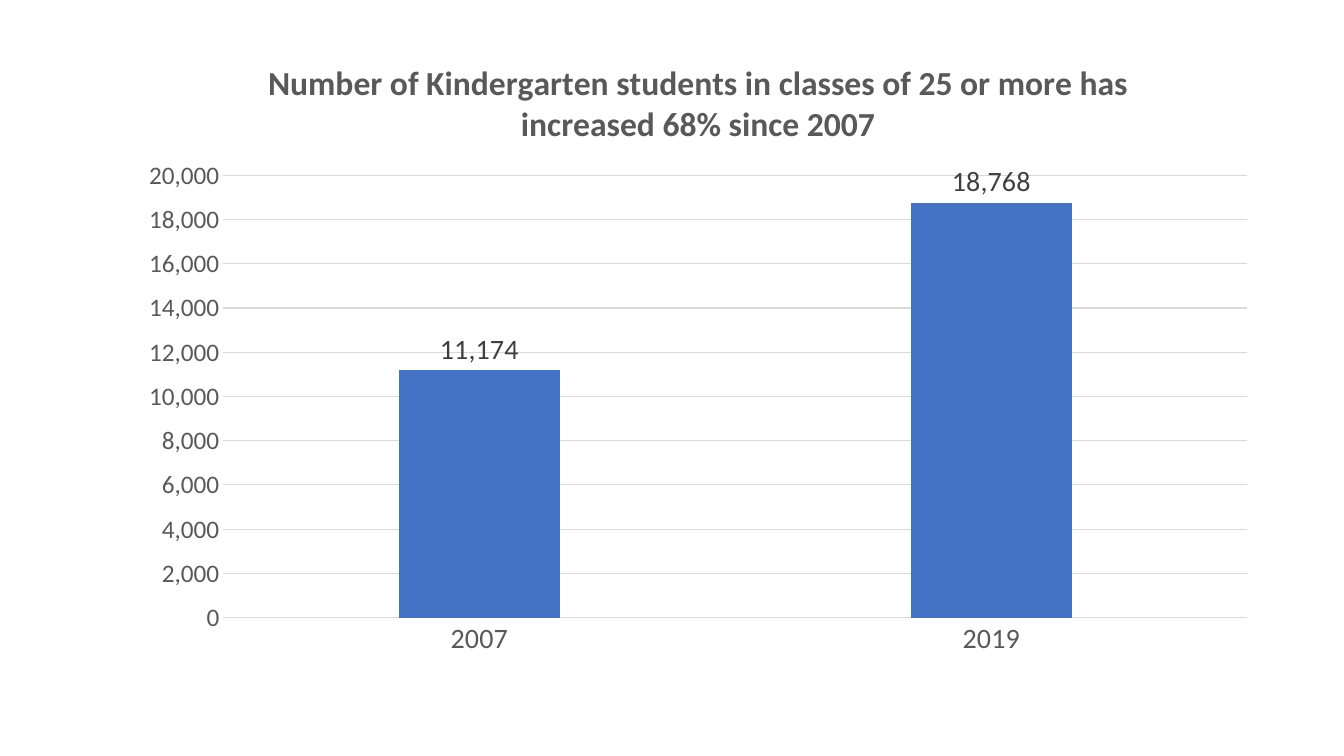
"""Build a slide with a column chart of large Kindergarten classes in 2007 and 2019."""
from lxml import etree
from pptx import Presentation
from pptx.chart.data import CategoryChartData
from pptx.dml.color import RGBColor
from pptx.enum.chart import XL_CHART_TYPE, XL_LABEL_POSITION, XL_TICK_MARK
from pptx.oxml.ns import qn
from pptx.util import Inches, Pt

COLUMN_CLUSTERED = XL_CHART_TYPE.COLUMN_CLUSTERED
OUTSIDE_END = XL_LABEL_POSITION.OUTSIDE_END
NO_TICKS = XL_TICK_MARK.NONE
BLUE = RGBColor(0x44, 0x72, 0xC4)
TEXT_GRAY = RGBColor(0x59, 0x59, 0x59)
LABEL_GRAY = RGBColor(0x40, 0x40, 0x40)
LINE_GRAY = RGBColor(0xD9, 0xD9, 0xD9)
FONT = "Calibri"
NUMBER_FORMAT = "#,##0"


def style_font(font, size, color, bold=False):
    font.name = FONT
    font.size = Pt(size)
    font.bold = bold
    font.color.rgb = color


def style_line(line):
    line.color.rgb = LINE_GRAY
    line.width = Pt(0.75)


presentation = Presentation()
presentation.slide_width = Inches(13.33)
presentation.slide_height = Inches(7.5)
slide = presentation.slides.add_slide(presentation.slide_layouts[6])

chart_data = CategoryChartData(number_format=NUMBER_FORMAT)
chart_data.categories = ["2007", "2019"]
chart_data.add_series("Series 1", (11174, 18768))
chart = slide.shapes.add_chart(
    COLUMN_CLUSTERED, Inches(1.25), Inches(0.36), Inches(11.35), Inches(6.27), chart_data
).chart
chart.has_legend = False
chart.font.name = FONT
chart.font.size = Pt(10)

chart.has_title = True
title_run = chart.chart_title.text_frame.paragraphs[0].add_run()
title_run.text = "Number of Kindergarten students in classes of 25 or more has increased 68% since 2007"
style_font(title_run.font, 24, TEXT_GRAY, bold=True)
chart.chart_title.include_in_layout = False

category_axis, value_axis = chart.category_axis, chart.value_axis
for axis, size in ((category_axis, 20), (value_axis, 18)):
    axis.major_tick_mark = NO_TICKS
    axis.minor_tick_mark = NO_TICKS
    style_font(axis.tick_labels.font, size, TEXT_GRAY)
style_line(category_axis.format.line)
value_axis.format.line.fill.background()
value_axis.minimum_scale = 0
value_axis.maximum_scale = 20000
value_axis.major_unit = 2000
value_axis.has_major_gridlines = True
style_line(value_axis.major_gridlines.format.line)
value_axis.tick_labels.number_format = NUMBER_FORMAT
value_axis.tick_labels.number_format_is_linked = False

plot = chart.plots[0]
plot.gap_width = 219
plot.overlap = -27
plot.vary_by_categories = False
series = plot.series[0]
series.format.fill.solid()
series.format.fill.fore_color.rgb = BLUE
labels = series.data_labels
labels.show_value = True
labels.position = OUTSIDE_END
labels.number_format = NUMBER_FORMAT
labels.number_format_is_linked = False
style_font(labels.font, 20, LABEL_GRAY)

plot_area = chart.element.find(".//" + qn("c:plotArea"))
for automatic_layout in plot_area.findall(qn("c:layout")):
    plot_area.remove(automatic_layout)
layout = etree.Element(qn("c:layout"))
plot_area.insert(0, layout)
manual_layout = etree.SubElement(layout, qn("c:manualLayout"))
for tag, value in (
    ("layoutTarget", "inner"), ("xMode", "edge"), ("yMode", "edge"),
    ("x", "0.085"), ("y", "0.22"), ("w", "0.895"), ("h", "0.7"),
):
    etree.SubElement(manual_layout, qn("c:" + tag)).set("val", value)

presentation.save("out.pptx")
